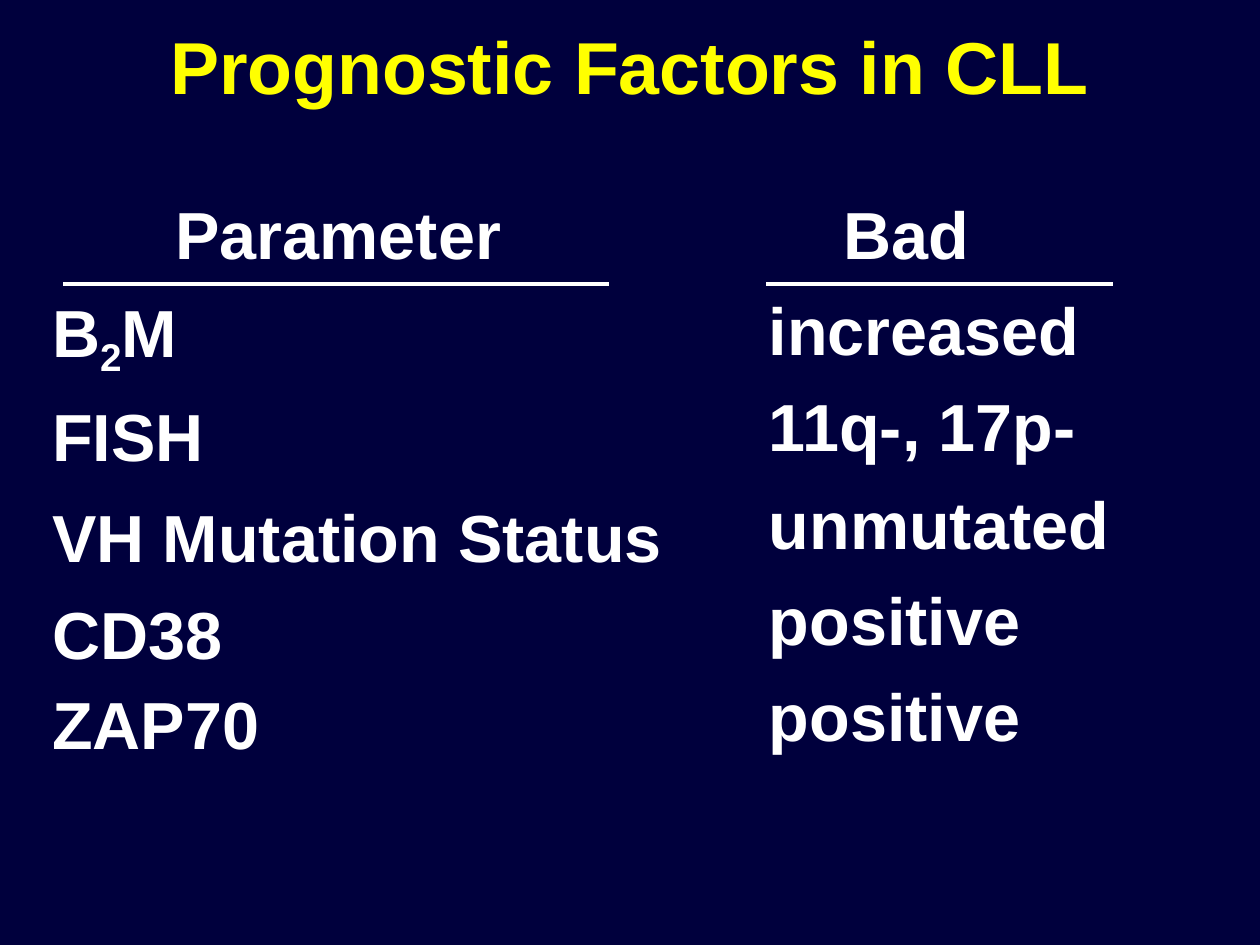
from lxml.etree import SubElement
from pptx import Presentation
from pptx.dml.color import RGBColor
from pptx.enum.shapes import MSO_CONNECTOR as CONN
from pptx.enum.text import MSO_ANCHOR, MSO_AUTO_SIZE as AUTO, PP_ALIGN as ALIGN
from pptx.oxml.ns import qn
from pptx.util import Cm, Pt

NAVY = RGBColor(0x00, 0x00, 0x3D)
YELLOW = RGBColor(0xFF, 0xFF, 0x00)
WHITE = RGBColor(0xFF, 0xFF, 0xFF)
FONT = "Arial"
ROW_PITCH = 54.9  # points

# Each row: text runs, space before (pt), line height (pt)
PARAMETERS = [
    (["B", ("2", -21), "M"], 0, ROW_PITCH),
    (["FISH"], 0, ROW_PITCH),
    (["VH Mutation Status"], 3, ROW_PITCH),
    (["CD38"], 0, ROW_PITCH),
    (["ZAP70"], 0, 51.5),
]
BAD_VALUES = [
    (["increased"], 0, ROW_PITCH),
    (["11q-, 17p-"], 0, ROW_PITCH),
    (["unmutated"], 1, ROW_PITCH),
    (["positive"], 0, ROW_PITCH),
    (["positive"], 0, ROW_PITCH),
]


def add_text(p, text, size=38, color=WHITE, bold=True, baseline=0):
    """Add one formatted run to a paragraph."""
    r = p.add_run()
    r.text = text
    f = r.font
    f.name, f.size, f.bold = FONT, Pt(size), bold
    f.color.rgb = color
    if baseline:
        r._r.get_or_add_rPr().set("baseline", str(baseline * 1000))


def format_paragraph(p, indent=0.03, before=0, line=1.0):
    p.alignment = ALIGN.LEFT
    p.space_before = Pt(before)
    p.line_spacing = line
    pPr = p._p.get_or_add_pPr()
    pPr.set("marL", str(Cm(indent)))
    pPr.set("indent", "0")
    SubElement(pPr, qn("a:buNone"))


def prepare_frame(sp, left, top, width, height, inset_top=0.02):
    """Place a text shape and return its bare text frame."""
    sp.left, sp.top, sp.width, sp.height = map(Cm, (left, top, width, height))
    tf = sp.text_frame
    tf.word_wrap = True
    tf.auto_size = AUTO.NONE
    tf.vertical_anchor = MSO_ANCHOR.TOP
    tf.margin_left = tf.margin_right = tf.margin_bottom = 0
    tf.margin_top = Cm(inset_top)
    return tf


def fill_list(tf, rows, indent):
    for i, (runs, before, line) in enumerate(rows):
        p = tf.add_paragraph() if i else tf.paragraphs[0]
        format_paragraph(p, indent, before, Pt(line))
        for run in runs:
            text, baseline = (run, 0) if isinstance(run, str) else run
            add_text(p, text, baseline=baseline)


def add_heading(s, text, left, width):
    tf = prepare_frame(s.shapes.add_textbox(0, 0, 0, 0), left, 3.88, width, 1.68)
    format_paragraph(tf.paragraphs[0])
    add_text(tf.paragraphs[0], text)


def add_rule(s, left, width, top=5.72):
    rule = s.shapes.add_connector(
        CONN.STRAIGHT, Cm(left), Cm(top), Cm(left + width), Cm(top))
    rule.line.color.rgb = WHITE
    rule.line.width = Pt(2.25)
    SubElement(rule._element.spPr, qn("a:effectLst"))


def main():
    prs = Presentation()
    prs.slide_width, prs.slide_height = Cm(25.4), Cm(19.05)
    s = prs.slides.add_slide(prs.slide_layouts[3])
    s.background.fill.solid()
    s.background.fill.fore_color.rgb = NAVY
    title, left_list, right_list = s.placeholders

    # Title
    tf = prepare_frame(title, 3.4, 0.41, 18.6, 1.85)
    format_paragraph(tf.paragraphs[0])
    add_text(tf.paragraphs[0], "Prognostic Factors in CLL", size=42, color=YELLOW)

    # Column headings
    add_heading(s, "Parameter", 3.51, 8)
    add_heading(s, "Bad", 16.98, 4)

    # Columns
    tf = prepare_frame(left_list, 0.95, 5.49, 12.5, 9.73, 0.21)
    fill_list(tf, PARAMETERS, indent=0.1)
    tf = prepare_frame(right_list, 15.47, 5.49, 6.93, 9.73, 0.01)
    fill_list(tf, BAD_VALUES, indent=0.03)

    # Rules under the headings
    add_rule(s, 1.27, 11)
    add_rule(s, 15.45, 6.98)

    prs.save("out.pptx")


if __name__ == "__main__":
    main()
